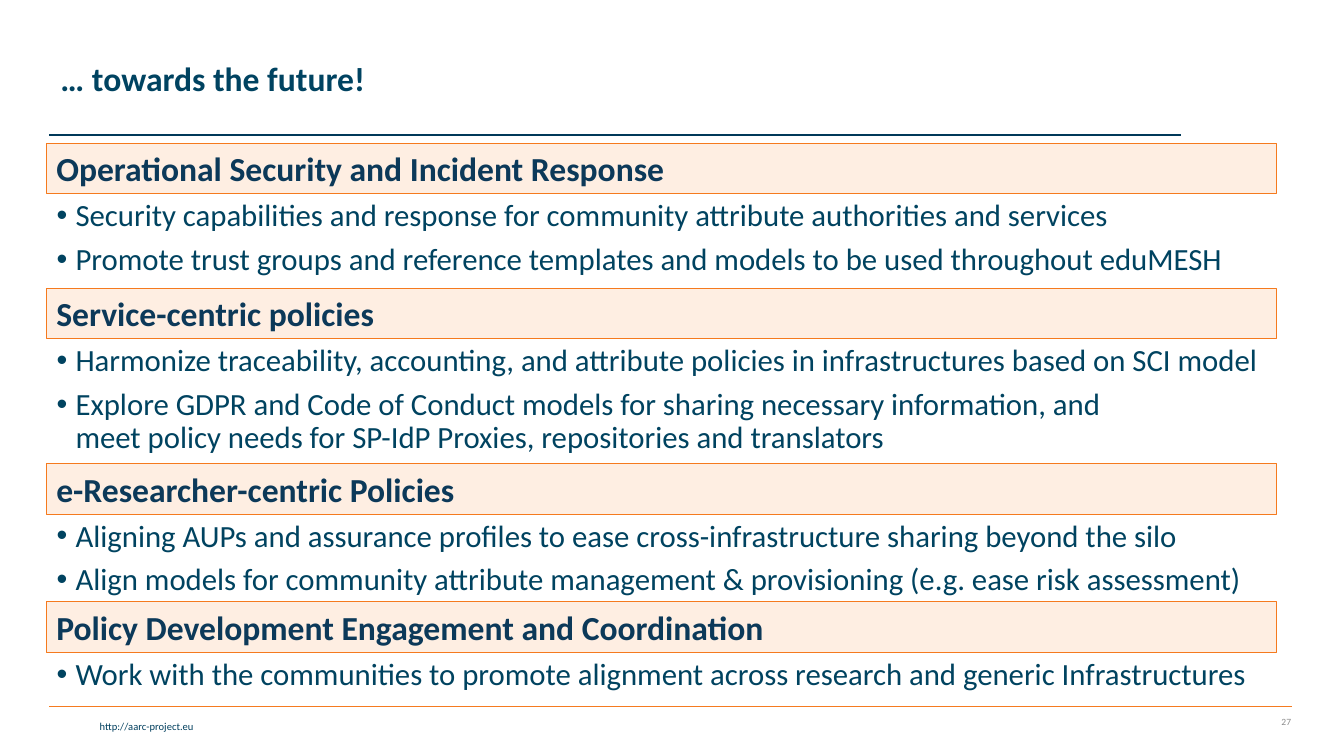
from dataclasses import dataclass

from lxml import etree
from pptx import Presentation
from pptx.dml.color import RGBColor
from pptx.enum.shapes import MSO_CONNECTOR, MSO_SHAPE
from pptx.enum.text import MSO_ANCHOR, MSO_AUTO_SIZE, PP_ALIGN
from pptx.oxml.ns import qn
from pptx.util import Cm, Pt

RECT = MSO_SHAPE.RECTANGLE
STRAIGHT = MSO_CONNECTOR.STRAIGHT
TOP, MIDDLE = MSO_ANCHOR.TOP, MSO_ANCHOR.MIDDLE
LEFT, RIGHT = PP_ALIGN.LEFT, PP_ALIGN.RIGHT
FIXED, GROW = MSO_AUTO_SIZE.NONE, MSO_AUTO_SIZE.SHAPE_TO_FIT_TEXT


@dataclass(frozen=True)
class Theme:
    font: str = "Calibri"
    title: str = "004361"
    heading: str = "0C3959"
    body: str = "004360"
    footer: str = "003F5E"
    number: str = "8C8C8C"
    band: str = "FEEEE2"
    band_line: str = "F57A1E"
    top_rule: str = "003959"
    bottom_rule: str = "F57B20"
    heading_size: float = 24
    body_size: float = 22
    footer_size: float = 7.5
    number_size: float = 6.8


THEME = Theme()
BAND_LEFT, BAND_WIDTH, BAND_HEIGHT = 1.17, 30.99, 1.28
LIST_OFFSET = 1.31
BULLET_INDENT = Cm(0.48)

SECTIONS = [
    (3.61, 2.41, "Operational Security and Incident Response", [
        "Security capabilities and response for community attribute authorities and services",
        "Promote trust groups and reference templates and models to be used throughout eduMESH",
    ]),
    (7.26, 3.28, "Service-centric policies", [
        "Harmonize traceability, accounting, and attribute policies in infrastructures based on SCI model",
        "Explore GDPR and Code of Conduct models for sharing necessary information, and\v"
        "meet policy needs for SP-IdP Proxies, repositories and translators",
    ]),
    (11.68, 2.29, "e-Researcher-centric Policies", [
        "Aligning AUPs and assurance profiles to ease cross-infrastructure sharing beyond the silo",
        "Align models for community attribute management & provisioning (e.g. ease risk assessment)",
    ]),
    (15.16, 1.19, "Policy Development Engagement and Coordination", [
        "Work with the communities to promote alignment across research and generic Infrastructures",
    ]),
]


def rgb(color):
    return RGBColor.from_string(color)


def write(p, text, *, size, color, bold=False, align=LEFT, spacing=1.0, before=0):
    p.text = text
    p.alignment = align
    p.line_spacing = spacing
    p.space_before = Pt(before)
    for r in p.runs:
        r.font.name = THEME.font
        r.font.size = Pt(size)
        r.font.bold = bold
        r.font.color.rgb = rgb(color)


def frame(sp, anchor=TOP, auto_size=FIXED):
    tf = sp.text_frame
    tf.word_wrap = True
    tf.auto_size = auto_size
    tf.vertical_anchor = anchor
    return tf


def place(sp, left, top, width, height):
    sp.left, sp.top, sp.width, sp.height = Cm(left), Cm(top), Cm(width), Cm(height)


def add_bullet(p):
    pPr = p._p.get_or_add_pPr()
    pPr.set("marL", str(BULLET_INDENT))
    pPr.set("indent", str(-BULLET_INDENT))
    etree.SubElement(pPr, qn("a:buFont")).set("typeface", "Arial")
    etree.SubElement(pPr, qn("a:buChar")).set("char", "•")


def add_rule(slide, left, right, y, color):
    line = slide.shapes.add_connector(STRAIGHT, Cm(left), Cm(y), Cm(right), Cm(y))
    line.line.color.rgb = rgb(color)
    line.line.width = Pt(1)
    etree.SubElement(line._element.spPr, qn("a:effectLst"))


def add_label(slide, box, text, anchor=TOP, **style):
    sp = slide.shapes.add_textbox(*map(Cm, box))
    write(frame(sp, anchor).paragraphs[0], text, **style)


def add_heading(slide, top, text):
    sp = slide.shapes.add_shape(
        RECT, Cm(BAND_LEFT), Cm(top), Cm(BAND_WIDTH), Cm(BAND_HEIGHT))
    sp.shadow.inherit = False
    sp.fill.solid()
    sp.fill.fore_color.rgb = rgb(THEME.band)
    sp.line.color.rgb = rgb(THEME.band_line)
    sp.line.width = Pt(0.75)
    write(frame(sp, auto_size=GROW).paragraphs[0], text,
          size=THEME.heading_size, color=THEME.heading, bold=True)


def fill_list(sp, top, height, items):
    place(sp, BAND_LEFT, top, BAND_WIDTH, height)
    tf = frame(sp)
    for i, item in enumerate(items):
        p = tf.add_paragraph() if i else tf.paragraphs[0]
        add_bullet(p)
        write(p, item, size=THEME.body_size, color=THEME.body,
              spacing=0.9, before=7.5 if i else 0)


def fill_title(sp, text):
    place(sp, 1.27, 0.2, 26.7, 3.68)
    write(frame(sp, MIDDLE).paragraphs[0], text, size=THEME.heading_size,
          color=THEME.title, bold=True, spacing=0.9)


def main():
    prs = Presentation()
    prs.slide_width, prs.slide_height = Cm(33.87), Cm(19.05)
    comparison_layout = prs.slide_layouts[4]
    slide = prs.slides.add_slide(comparison_layout)

    add_rule(slide, 1.24, 32.56, 17.81, THEME.bottom_rule)
    add_rule(slide, 1.24, 29.77, 3.4, THEME.top_rule)
    add_label(slide, (0.08, 18.01, 5.05, 0.58), "http://aarc-project.eu",
              size=THEME.footer_size, color=THEME.footer, align=RIGHT)
    add_label(slide, (30.73, 17.81, 2.06, 0.76), "27", MIDDLE,
              size=THEME.number_size, color=THEME.number, align=RIGHT)

    fill_title(slide.shapes.title, "… towards the future!")
    bodies = list(slide.placeholders)[1:]
    for body, (top, height, heading, items) in zip(bodies, SECTIONS):
        add_heading(slide, top, heading)
        fill_list(body, top + LIST_OFFSET, height, items)

    prs.save("out.pptx")


if __name__ == "__main__":
    main()
